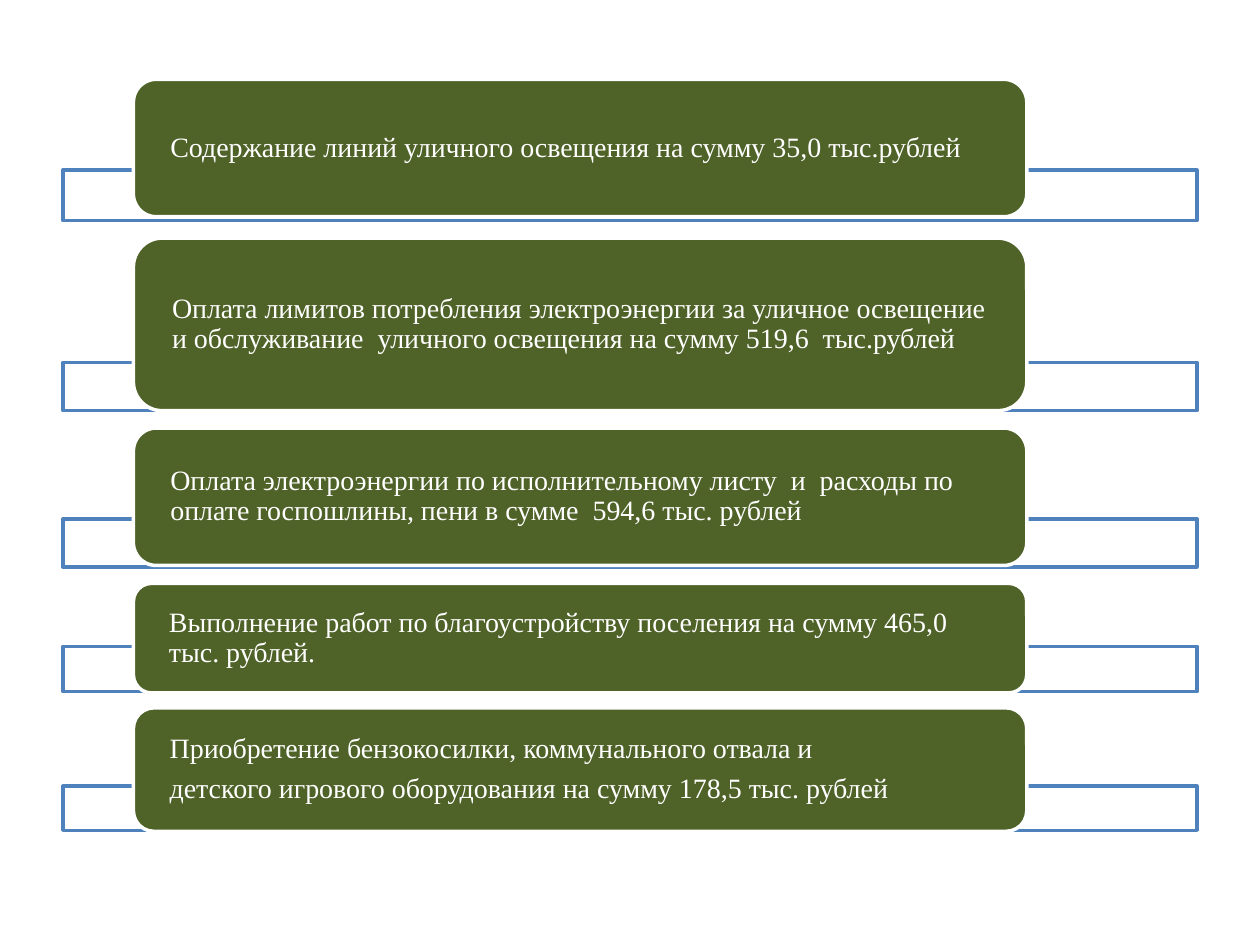
"""Build a slide listing five spending items as cards laid over outlined bars."""
import pptx
import pptx.util
import pptx.dml.color
import pptx.enum.shapes
import pptx.enum.text
import lxml.etree
from pptx.oxml.ns import qn

Cm = pptx.util.Cm
Pt = pptx.util.Pt
Shape = pptx.enum.shapes.MSO_SHAPE
WHITE = pptx.dml.color.RGBColor(0xFF, 0xFF, 0xFF)
BLUE = pptx.dml.color.RGBColor(0x4F, 0x81, 0xBD)
GREEN = pptx.dml.color.RGBColor(0x4F, 0x62, 0x28)

ITEMS = [
    (1.6, 2.77, 3.43, 1.02,
     ["Содержание линий уличного освещения на сумму 35,0 тыс.рублей"]),
    (4.8, 3.48, 7.31, 0.97,
     ["Оплата лимитов потребления электроэнергии за уличное освещение "
      "и обслуживание  уличного освещения на сумму 519,6  тыс.рублей"]),
    (8.63, 2.77, 10.46, 0.97,
     ["Оплата электроэнергии по исполнительному листу  и  расходы по "
      "оплате госпошлины, пени в сумме  594,6 тыс. рублей"]),
    (11.76, 2.21, 13.03, 0.91,
     ["Выполнение работ по благоустройству поселения на сумму 465,0 "
      "тыс. рублей."]),
    (14.27, 2.49, 15.85, 0.89,
     ["Приобретение бензокосилки, коммунального отвала и",
      "детского игрового оборудования на сумму 178,5 тыс. рублей"]),
]

deck = pptx.Presentation()
deck.slide_width = Cm(25.4)
deck.slide_height = Cm(19.05)
slide = deck.slides.add_slide(deck.slide_layouts[6])


def add_box(kind, left, top, width, height, fill, line):
    box = slide.shapes.add_shape(kind, Cm(left), Cm(top), Cm(width), Cm(height))
    box.shadow.inherit = False
    box.fill.solid()
    box.fill.fore_color.rgb = fill
    box.line.color.rgb = line
    box.line.width = Pt(2)
    return box


for top, height, bar_top, bar_height, lines in ITEMS:
    bar = add_box(Shape.RECTANGLE, 1.27, bar_top, 22.86, bar_height, WHITE, BLUE)
    color = bar.fill._xPr.find(qn("a:solidFill"))[0]
    lxml.etree.SubElement(color, qn("a:alpha"), val="90000")

    card = add_box(Shape.ROUNDED_RECTANGLE, 2.69, top, 18.01, height, GREEN, WHITE)
    frame = card.text_frame
    frame.word_wrap = True
    frame.vertical_anchor = pptx.enum.text.MSO_ANCHOR.MIDDLE
    frame.margin_left = frame.margin_right = Cm(0.61)
    frame.margin_top = frame.margin_bottom = 0
    frame.text = "\n".join(lines)
    for para in frame.paragraphs:
        para.alignment = pptx.enum.text.PP_ALIGN.LEFT
        para.line_spacing = 0.9
        para.space_after = Pt(5.6)
        para.font.name = "Times New Roman"
        para.font.size = Pt(16)
        para.font.color.rgb = WHITE

deck.save("out.pptx")
